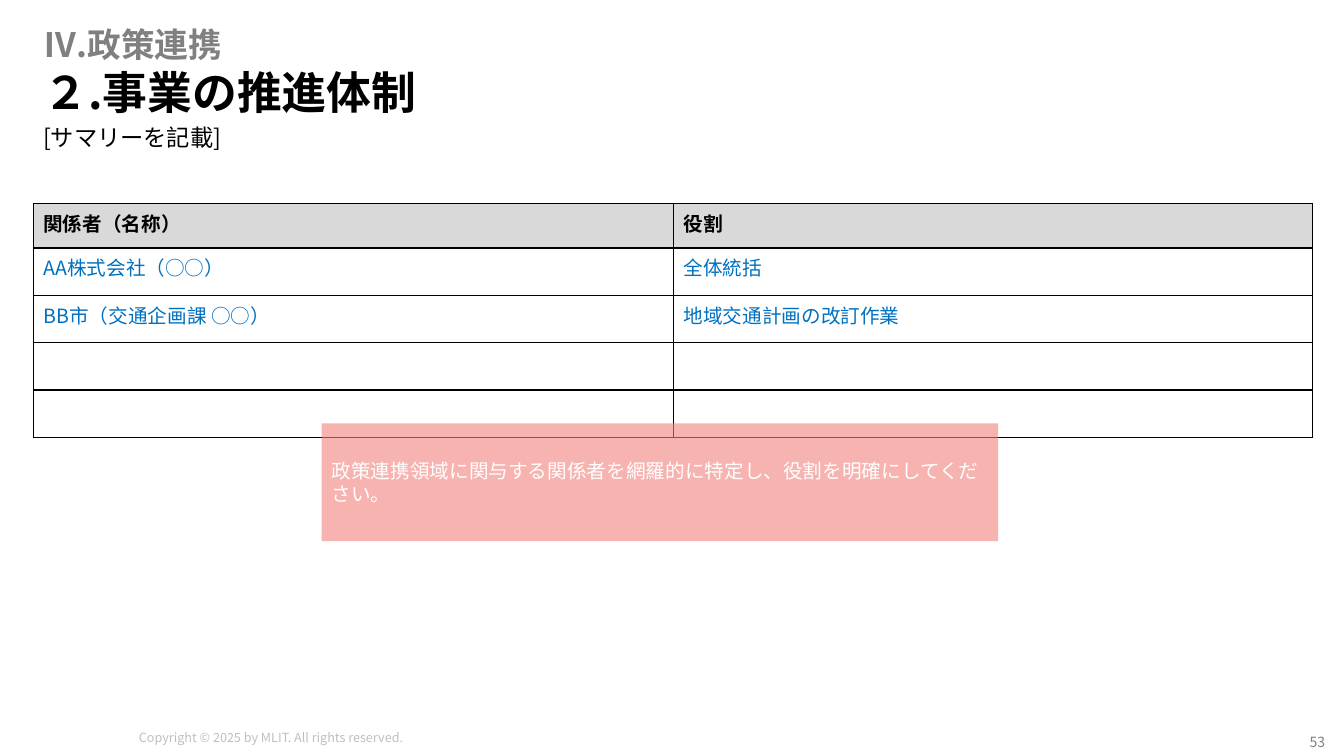
from lxml import etree
from pptx import Presentation, util as u
from pptx.dml.color import RGBColor
from pptx.enum import shapes, text
from pptx.oxml.ns import qn

FONT = "Noto Sans CJK JP"
BLACK, GRAY, WHITE, BLUE = "000000", "808080", "FFFFFF", "0070C0"
ROWS = [
    ("関係者（名称）", "役割"),
    ("AA株式会社（○○）", "全体統括"),
    ("BB市（交通企画課 ○○）", "地域交通計画の改訂作業"),
    ("", ""),
    ("", ""),
]


def color(value):
    return RGBColor.from_string(value)


def place(box):
    return [u.Inches(length) for length in box]


def write(frame, words, size, ink, bold=False, spacing=None, align=text.PP_ALIGN.LEFT):
    frame.text = words
    para = frame.paragraphs[0]
    para.alignment = align
    if spacing:
        para.line_spacing = spacing
    for span in para.runs:
        span.font.size = u.Pt(size)
        span.font.bold = bold
        span.font.color.rgb = color(ink)
        span.font.name = FONT
        latin = span.font._element.find(qn("a:latin"))
        latin.addnext(etree.Element(qn("a:ea"), typeface=FONT))


def set_margins(frame, left, top, right, bottom):
    frame.margin_left, frame.margin_top = u.Inches(left), u.Inches(top)
    frame.margin_right, frame.margin_bottom = u.Inches(right), u.Inches(bottom)


def add_label(page, box, words, size, ink, margins=(0.1, 0.05, 0.1, 0.05),
              wrap=True, anchor=text.MSO_ANCHOR.MIDDLE, **style):
    frame = page.shapes.add_textbox(*place(box)).text_frame
    frame.word_wrap = wrap
    frame.vertical_anchor = anchor
    set_margins(frame, *margins)
    write(frame, words, size, ink, **style)


def add_heading(page, box):
    left, top, width, height = box
    tight = (0.1, 0, 0.1, 0.05)
    add_label(page, (left, top + 1, width, 0.35), "[サマリーを記載]", 16.6, BLACK,
              tight, spacing=0.8)
    add_label(page, (left, top, width, 0.45), "Ⅳ.政策連携", 24, GRAY, tight, bold=True)
    add_label(page, (left, top + 0.48, width, 0.47), "２.事業の推進体制", 32, BLACK,
              bold=True, spacing=0.8)


def set_borders(cell):
    props = cell._tc.get_or_add_tcPr()
    for index, side in enumerate(("lnL", "lnR", "lnT", "lnB")):
        line = etree.Element(qn(f"a:{side}"), w=str(u.Pt(1)))
        fill = etree.SubElement(line, qn("a:solidFill"))
        etree.SubElement(fill, qn("a:srgbClr"), val=BLACK)
        props.insert(index, line)


def add_roles(page, box):
    table = page.shapes.add_table(len(ROWS), 2, *place(box)).table
    table.first_row = table.horz_banding = False
    for column, width in zip(table.columns, (6.35, 6.34)):
        column.width = u.Inches(width)
    for index, words in enumerate(ROWS):
        header = index == 0
        table.rows[index].height = u.Inches(0.44 if header else 0.47)
        for cell, entry in zip(table.rows[index].cells, words):
            cell.fill.solid()
            cell.fill.fore_color.rgb = color("D9D9D9" if header else WHITE)
            set_borders(cell)
            if entry:
                write(cell.text_frame, entry, 14, BLACK if header else BLUE, bold=header)


def add_guidance(page, box):
    note = page.shapes.add_shape(shapes.MSO_SHAPE.RECTANGLE, *place(box))
    note.shadow.inherit = False
    note.line.fill.background()
    note.fill.solid()
    note.fill.fore_color.rgb = color("F3817B")
    tint = note._element.spPr.find(qn("a:solidFill"))[0]
    etree.SubElement(tint, qn("a:alpha"), val="60000")
    note.text_frame.word_wrap = True
    note.text_frame.vertical_anchor = text.MSO_ANCHOR.MIDDLE
    write(note.text_frame,
          "政策連携領域に関与する関係者を網羅的に特定し、役割を明確にしてください。", 14, WHITE)


def add_footer(page, box):
    left, top, width, height = box
    add_label(page, (left, top, 3.47, height),
              "Copyright © 2025 by MLIT. All rights reserved.", 9, "BFBFBF",
              wrap=False, anchor=text.MSO_ANCHOR.TOP)
    add_label(page, (left + width - 0.31, top + 0.05, 0.31, height), "53", 10, GRAY,
              (0.04, 0.04, 0.04, 0.04), wrap=False, anchor=text.MSO_ANCHOR.TOP,
              align=text.PP_ALIGN.CENTER)


def main():
    deck = Presentation()
    deck.slide_width, deck.slide_height = u.Inches(13.33), u.Inches(7.5)
    page = deck.slides.add_slide(deck.slide_layouts[6])
    add_footer(page, (1.28, 7.19, 11.94, 0.25))
    add_heading(page, (0.33, 0.24, 12.44, 1.35))
    add_roles(page, (0.33, 2.02, 12.69, 2.32))
    add_guidance(page, (3.19, 4.2, 6.71, 1.17))
    deck.save("out.pptx")


if __name__ == "__main__":
    main()
